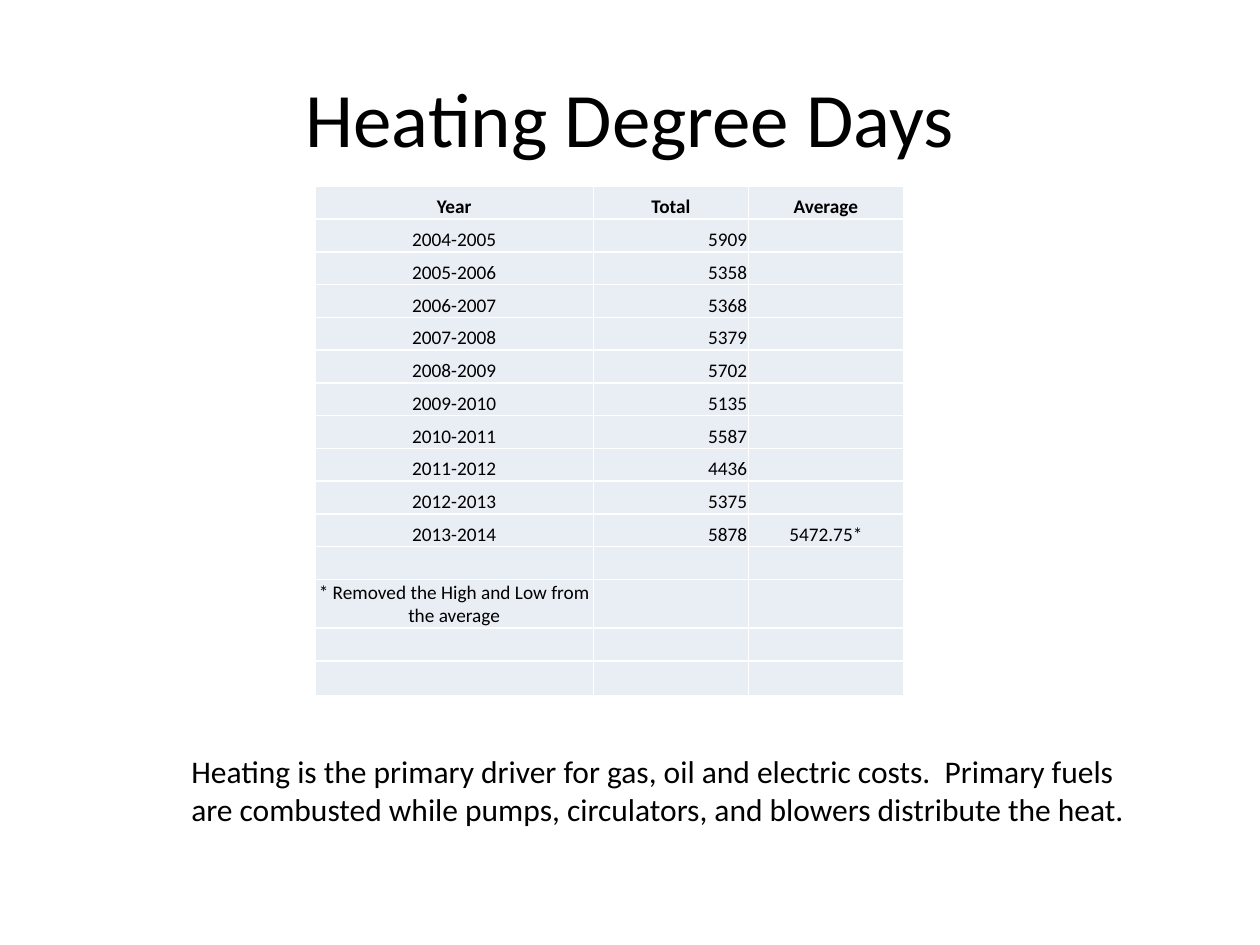
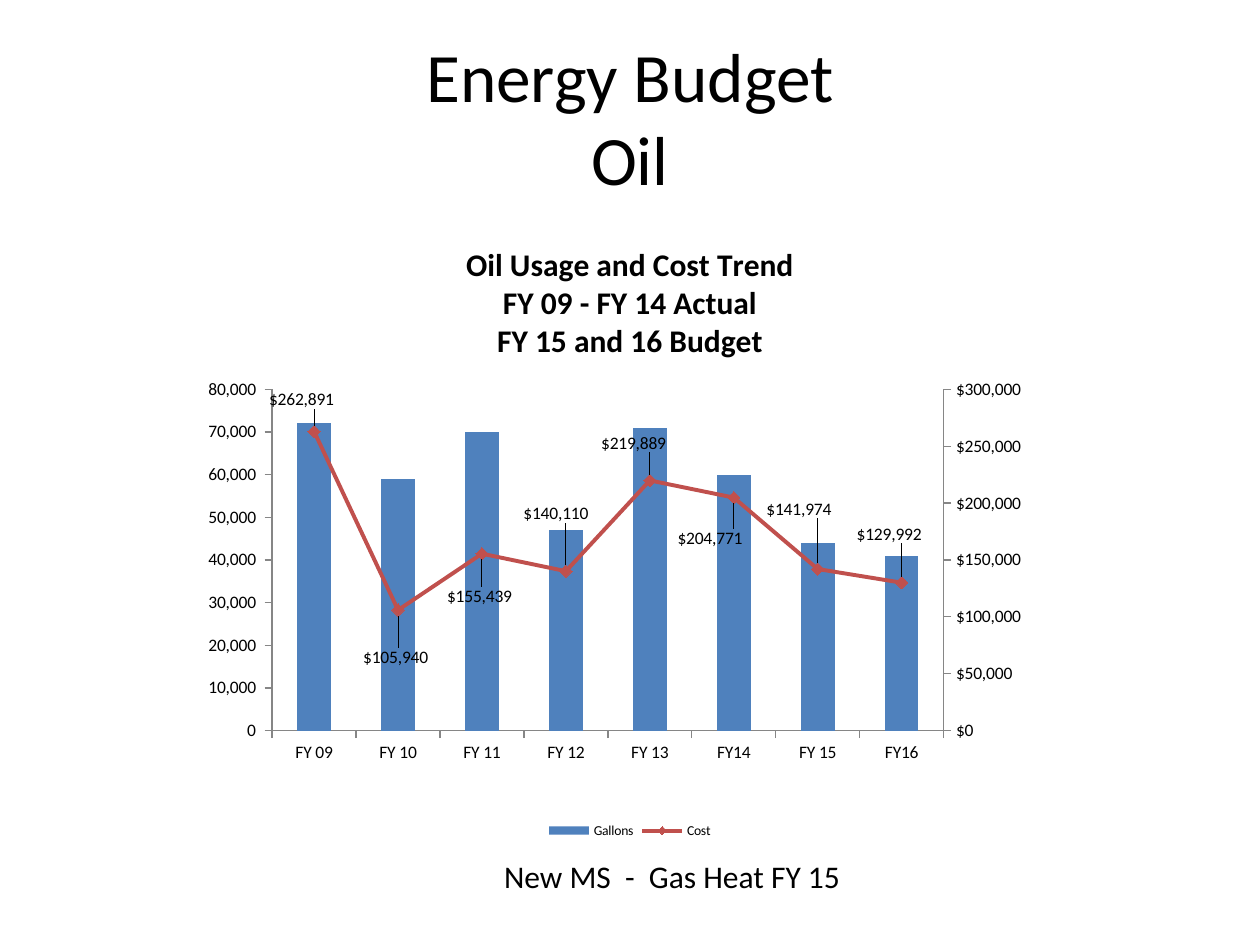
from dataclasses import dataclass

from lxml import etree
from pptx import Presentation
from pptx import util as u
from pptx.chart import axis as ax
from pptx.chart.data import CategoryChartData
from pptx.dml.color import RGBColor
from pptx.enum import chart as ch
from pptx.enum import text as t
from pptx.oxml import parse_xml
from pptx.oxml.ns import nsdecls, qn

FONT = "Calibri"
BLACK = RGBColor(0x00, 0x00, 0x00)
WHITE = RGBColor(0xFF, 0xFF, 0xFF)
PALE = RGBColor(0xE9, 0xED, 0xF4)
BLUE = RGBColor(0x4F, 0x81, 0xBD)
RED = RGBColor(0xC0, 0x50, 0x4D)
GREY = RGBColor(0x86, 0x86, 0x86)

TITLE_ONLY = 5
LEFT, CENTER, RIGHT = t.PP_ALIGN.LEFT, t.PP_ALIGN.CENTER, t.PP_ALIGN.RIGHT
ABOVE, BELOW = ch.XL_LABEL_POSITION.ABOVE, ch.XL_LABEL_POSITION.BELOW
CHART_WIDTH, CHART_HEIGHT = 9, 4.95
DOLLARS = "\\$#,##0"
GALLONS = "#,##0_);\\(#,##0\\)"


@dataclass
class Box:
    left: float
    top: float
    width: float
    height: float

    def lengths(self) -> list:
        return [u.Inches(v) for v in (self.left, self.top, self.width, self.height)]


@dataclass
class Caption:
    words: str
    box: Box
    align: t.PP_ALIGN


@dataclass
class FiscalYear:
    name: str
    gallons: int
    cost: int
    side: ch.XL_LABEL_POSITION
    nudge_x: float
    nudge_y: float


DEGREE_DAYS = [
    ("2004-2005", "5909"), ("2005-2006", "5358"), ("2006-2007", "5368"),
    ("2007-2008", "5379"), ("2008-2009", "5702"), ("2009-2010", "5135"),
    ("2010-2011", "5587"), ("2011-2012", "4436"), ("2012-2013", "5375"),
]
DEGREE_ROWS = [
    ("Year", "Total", "Average"),
    *[(year, total, "") for year, total in DEGREE_DAYS],
    ("2013-2014", "5878", "5472.75*"),
    ("", "", ""),
    ("* Removed the High and Low from the average", "", ""),
    ("", "", ""),
    ("", "", ""),
]
COLUMN_WIDTHS = (2.21, 1.23, 1.23)
ROW_HEIGHT, LAST_ROW_HEIGHT = 0.26, 0.28

OIL_YEARS = [
    FiscalYear("FY 09", 72000, 262891, ABOVE, -0.1, -0.09),
    FiscalYear("FY 10", 59000, 105940, BELOW, -0.02, 0.21),
    FiscalYear("FY 11", 70000, 155439, BELOW, -0.02, 0.17),
    FiscalYear("FY 12", 47000, 140110, ABOVE, -0.08, -0.29),
    FiscalYear("FY 13", 71000, 219889, ABOVE, -0.13, -0.13),
    FiscalYear("FY14", 60000, 204771, BELOW, -0.19, 0.16),
    FiscalYear("FY 15", 44000, 141974, ABOVE, -0.15, -0.31),
    FiscalYear("FY16", 41000, 129992, ABOVE, -0.1, -0.22),
]
TREND_TITLE = ("Oil Usage and Cost Trend", "FY 09 - FY 14 Actual", "FY 15 and 16 Budget")
PLOT_BOX = Box(1.66, 1.34, 5.33, 2.71)

HEATING_NOTE = Caption(
    "Heating is the primary driver for gas, oil and electric costs.  Primary fuels "
    "are combusted while pumps, circulators, and blowers distribute the heat.",
    Box(1.42, 5.92, 7.67, 0.71), LEFT)
GAS_NOTE = Caption("New MS  -  Gas Heat FY 15", Box(3.25, 6.75, 4.17, 0.4), CENTER)

COST_PLOT = f"""<c:lineChart {nsdecls("c")}>
  <c:grouping val="standard"/><c:varyColors val="0"/>
  <c:marker val="1"/><c:axId val="5001"/><c:axId val="5002"/>
</c:lineChart>"""
HIDDEN_YEARS = f"""<c:catAx {nsdecls("c")}>
  <c:axId val="5001"/><c:scaling><c:orientation val="minMax"/></c:scaling>
  <c:delete val="1"/><c:axPos val="b"/><c:crossAx val="5002"/><c:crosses val="autoZero"/>
</c:catAx>"""
COST_AXIS = f"""<c:valAx {nsdecls("c")}>
  <c:axId val="5002"/><c:scaling><c:orientation val="minMax"/></c:scaling>
  <c:delete val="0"/><c:axPos val="r"/><c:majorTickMark val="out"/>
  <c:tickLblPos val="nextTo"/><c:crossAx val="5001"/><c:crosses val="max"/>
</c:valAx>"""


def style_font(font, size: float, bold: bool = False) -> None:
    font.name = FONT
    font.size = u.Pt(size)
    font.bold = bold
    font.color.rgb = BLACK


def add_run(paragraph, words: str, size: float, bold: bool = False) -> None:
    run = paragraph.add_run()
    run.text = words
    style_font(run.font, size, bold)


def add_titled_slide(deck, lines: list[str], size: float):
    slide = deck.slides.add_slide(deck.slide_layouts[TITLE_ONLY])
    heading = slide.shapes.title
    heading.left, heading.top, heading.width, heading.height = Box(0.5, 0.3, 9, 1.25).lengths()
    heading.text_frame.vertical_anchor = t.MSO_ANCHOR.MIDDLE
    paragraph = heading.text_frame.paragraphs[0]
    paragraph.alignment = CENTER
    for number, line in enumerate(lines):
        if number:
            paragraph.add_line_break()
        add_run(paragraph, line, size)
    return slide


def add_caption(slide, caption: Caption) -> None:
    frame = slide.shapes.add_textbox(*caption.box.lengths()).text_frame
    frame.word_wrap = True
    frame.auto_size = t.MSO_AUTO_SIZE.SHAPE_TO_FIT_TEXT
    paragraph = frame.paragraphs[0]
    paragraph.alignment = caption.align
    add_run(paragraph, caption.words, 18)


def add_borders(cell) -> None:
    properties = cell._tc.get_or_add_tcPr()
    for position, side in enumerate(("lnL", "lnR", "lnT", "lnB")):
        properties.insert(position, parse_xml(
            f'<a:{side} {nsdecls("a")} w="{int(u.Pt(1))}"><a:solidFill>'
            f'<a:srgbClr val="{WHITE}"/></a:solidFill></a:{side}>'))


def fill_cell(cell, words: str, align: t.PP_ALIGN, bold: bool) -> None:
    cell.fill.solid()
    cell.fill.fore_color.rgb = PALE
    add_borders(cell)
    cell.vertical_anchor = t.MSO_ANCHOR.BOTTOM
    cell.margin_left = cell.margin_right = cell.margin_top = u.Inches(0.01)
    cell.margin_bottom = 0
    paragraph = cell.text_frame.paragraphs[0]
    paragraph.alignment = align
    if words:
        add_run(paragraph, words, 11, bold)
    else:
        etree.SubElement(paragraph._p, qn("a:endParaRPr"), sz="1100")


def add_degree_table(slide) -> None:
    box = Box(2.5, 1.48, 4.67, 4.05)
    table = slide.shapes.add_table(
        len(DEGREE_ROWS), len(COLUMN_WIDTHS), *box.lengths()).table
    table.horz_banding = False
    for column, width in zip(table.columns, COLUMN_WIDTHS):
        column.width = u.Inches(width)
    for number, words in enumerate(DEGREE_ROWS):
        is_last = number == len(DEGREE_ROWS) - 1
        table.rows[number].height = u.Inches(LAST_ROW_HEIGHT if is_last else ROW_HEIGHT)
        for column, word in enumerate(words):
            align = RIGHT if column == 1 and number else CENTER
            fill_cell(table.cell(number, column), word, align, number == 0)


def style_axis(axis, number_format: str = "") -> None:
    axis.has_major_gridlines = False
    axis.major_tick_mark = ch.XL_TICK_MARK.OUTSIDE
    axis.minor_tick_mark = ch.XL_TICK_MARK.NONE
    axis.format.line.color.rgb = GREY
    axis.format.line.width = u.Pt(0.75)
    style_font(axis.tick_labels.font, 10)
    if number_format:
        axis.tick_labels.number_format = number_format
        axis.tick_labels.number_format_is_linked = False


def manual_layout(**settings):
    layout = parse_xml(f'<c:layout {nsdecls("c")}><c:manualLayout/></c:layout>')
    for key, value in settings.items():
        etree.SubElement(layout[0], qn(f"c:{key}"), val=str(value))
    return layout


def move_cost_to_right_axis(chart) -> None:
    plot_area = chart.plots[0]._element.getparent()
    cost = chart.plots[0].series[1]._element
    for bar_setting in cost.findall(qn("c:invertIfNegative")):
        cost.remove(bar_setting)
    cost_plot = parse_xml(COST_PLOT)
    cost_plot.insert(2, cost)
    plot_area.find(qn("c:barChart")).addnext(cost_plot)
    cost_axis = parse_xml(COST_AXIS)
    plot_area.find(qn("c:valAx")).addnext(cost_axis)
    cost_axis.addnext(parse_xml(HIDDEN_YEARS))
    right_axis = ax.ValueAxis(cost_axis)
    style_axis(right_axis, DOLLARS)
    right_axis.minimum_scale, right_axis.maximum_scale = 0, 300000
    right_axis.major_unit = 50000
    for old in plot_area.findall(qn("c:layout")):
        plot_area.remove(old)
    plot_area.insert(0, manual_layout(
        layoutTarget="inner", xMode="edge", yMode="edge",
        x=PLOT_BOX.left / CHART_WIDTH, y=PLOT_BOX.top / CHART_HEIGHT,
        w=PLOT_BOX.width / CHART_WIDTH, h=PLOT_BOX.height / CHART_HEIGHT))


def style_cost_line(cost) -> None:
    cost.smooth = False
    cost.format.line.color.rgb = RED
    cost.format.line.width = u.Pt(2.25)
    cost.marker.style = ch.XL_MARKER_STYLE.DIAMOND
    cost.marker.size = 7
    cost.marker.format.fill.solid()
    cost.marker.format.fill.fore_color.rgb = RED
    cost.marker.format.line.color.rgb = RED
    labels = cost.data_labels
    labels.show_value = True
    labels.number_format = DOLLARS
    labels.number_format_is_linked = False
    style_font(labels.font, 10)
    for number, year in enumerate(OIL_YEARS):
        label = cost.points[number].data_label
        style_font(label.font, 10)
        label.position = year.side
    for element, year in zip(list(cost._element.iter(qn("c:dLbl"))), OIL_YEARS):
        element.insert(1, manual_layout(
            x=year.nudge_x / CHART_WIDTH, y=year.nudge_y / CHART_HEIGHT))


def add_trend_title(chart) -> None:
    frame = chart.chart_title.text_frame
    for number, line in enumerate(TREND_TITLE):
        paragraph = frame.add_paragraph() if number else frame.paragraphs[0]
        add_run(paragraph, line, 18, True)


def add_oil_chart(slide) -> None:
    data = CategoryChartData()
    data.categories = [year.name for year in OIL_YEARS]
    data.add_series("Gallons", [year.gallons for year in OIL_YEARS], GALLONS)
    data.add_series("Cost", [year.cost for year in OIL_YEARS], DOLLARS)
    box = Box(0.5, 1.75, CHART_WIDTH, CHART_HEIGHT)
    chart = slide.shapes.add_chart(
        ch.XL_CHART_TYPE.COLUMN_CLUSTERED, *box.lengths(), data).chart
    style_font(chart.font, 10)
    add_trend_title(chart)
    chart.has_legend = True
    chart.legend.position = ch.XL_LEGEND_POSITION.BOTTOM
    chart.legend.include_in_layout = False
    style_font(chart.legend.font, 7.8)
    style_axis(chart.category_axis)
    style_axis(chart.value_axis, GALLONS)
    chart.value_axis.minimum_scale, chart.value_axis.maximum_scale = 0, 80000
    chart.value_axis.major_unit = 10000
    move_cost_to_right_axis(chart)
    gallons_plot, cost_plot = chart.plots
    gallons_plot.gap_width = 150
    gallons_plot.vary_by_categories = False
    gallons_fill = gallons_plot.series[0].format.fill
    gallons_fill.solid()
    gallons_fill.fore_color.rgb = BLUE
    style_cost_line(cost_plot.series[0])


def main() -> None:
    deck = Presentation()
    deck.slide_width, deck.slide_height = u.Inches(10), u.Inches(7.5)
    heating = add_titled_slide(deck, ["Heating Degree Days"], 44)
    add_degree_table(heating)
    add_caption(heating, HEATING_NOTE)
    oil = add_titled_slide(deck, ["Energy Budget", "Oil"], 39.6)
    add_caption(oil, GAS_NOTE)
    add_oil_chart(oil)
    deck.save("out.pptx")


if __name__ == "__main__":
    main()
